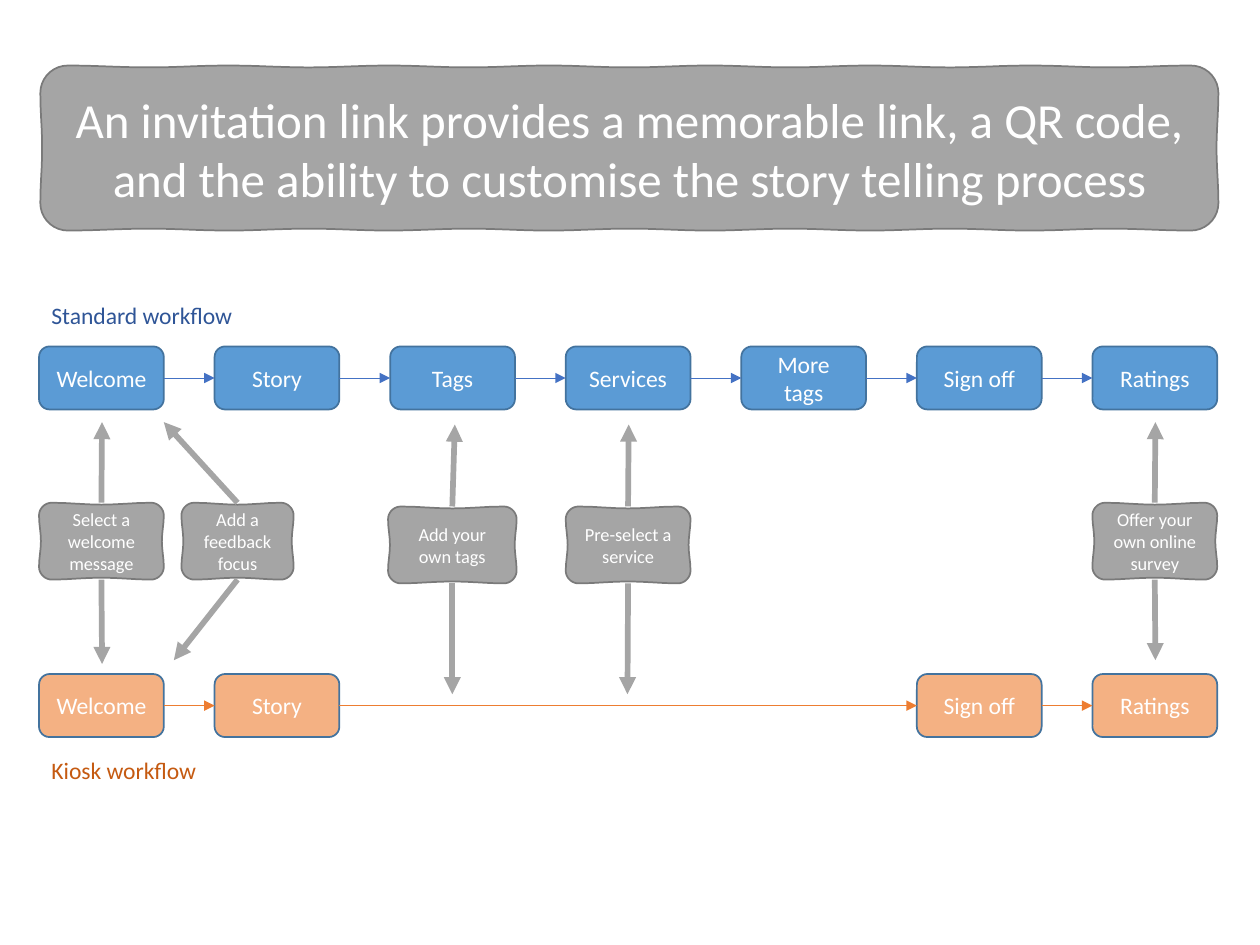
import math

from lxml import etree
from pptx import Presentation
from pptx.dml.color import RGBColor
from pptx.enum import shapes, text
from pptx.oxml import ns
from pptx.util import Inches, Pt

FONT = "Calibri"
WHITE, GREY, GREY_EDGE, BOX_EDGE = "FFFFFF", "A5A5A5", "7A7A7A", "43739E"
LEFT, PITCH = 0.31, 8.36 / 6
STEP_WIDTH, STEP_HEIGHT = 0.99, 0.5
TOP, LEFT_SIDE, BOTTOM, RIGHT_SIDE = range(4)
STEPS = ["Welcome", "Story", "Tags", "Services", "More tags", "Sign off", "Ratings"]
KIOSK_STEPS = ["Welcome", "Story", "Sign off", "Ratings"]

OPTIONS = [
    ("Select a welcome message", (0.31, 3.99, 0.99, 0.61), (0.81, 3.35), (0.81, 5.27)),
    ("Add a feedback focus", (1.44, 3.99, 0.89, 0.61), (1.3, 3.35), (1.38, 5.24)),
    ("Add your own tags", (3.08, 4.02, 1.02, 0.61), (3.61, 3.37), (3.59, 5.51)),
    ("Pre-select a service", (4.49, 4.02, 0.99, 0.61), (4.99, 3.37), (4.98, 5.51)),
    ("Offer your own online survey", (8.67, 3.99, 0.99, 0.61), (9.17, 3.35), (9.17, 5.24)),
]


def color(value):
    return RGBColor.from_string(value)


def apply(target, values):
    for name, value in values.items():
        setattr(target, name, value)


def write(shape, words, size, ink, align=text.PP_ALIGN.CENTER, **frame_values):
    frame = shape.text_frame
    apply(frame, {"word_wrap": True, **frame_values})
    para = frame.paragraphs[0]
    para.alignment = align
    span = para.add_run()
    span.text = words
    apply(span.font, {"name": FONT, "size": Pt(size)})
    span.font.color.rgb = color(ink)


def paint(shape, fill, edge):
    shape.shadow.inherit = False
    shape.fill.solid()
    shape.fill.fore_color.rgb = color(fill)
    shape.line.color.rgb = color(edge)
    shape.line.width = Pt(1)


def add_arrow(page, start, end, ink, width):
    arrow = page.shapes.add_connector(
        shapes.MSO_CONNECTOR.STRAIGHT, *map(Inches, (*start, *end)))
    arrow.line.color.rgb = color(ink)
    arrow.line.width = Pt(width)
    properties = arrow.element.spPr
    outline = properties.find(ns.qn("a:ln"))
    etree.SubElement(outline, ns.qn("a:tailEnd"), type="triangle")
    etree.SubElement(properties, ns.qn("a:effectLst"))
    return arrow


def sketch_points(left, top, width, height):
    radius = height / 6
    right, bottom = left + width, top + height
    corners = [
        (right - radius, top + radius, -90), (right - radius, bottom - radius, 0),
        (left + radius, bottom - radius, 90), (left + radius, top + radius, 180),
    ]
    arcs = [
        [(x + radius * math.cos(math.radians(first + turn)),
          y + radius * math.sin(math.radians(first + turn)))
         for turn in range(0, 91, 10)]
        for x, y, first in corners
    ]
    points = []
    for arc, following in zip(arcs, arcs[1:] + arcs[:1]):
        points += arc
        (x1, y1), (x2, y2) = arc[-1], following[0]
        length = math.hypot(x2 - x1, y2 - y1)
        count = max(8, round(length * 10))
        waves = max(1, round(length * 0.8))
        for index in range(1, count):
            share = index / count
            inset = 0.015 * math.sin(math.pi * waves * share) ** 2
            points.append((x1 + (x2 - x1) * share - (y2 - y1) / length * inset,
                           y1 + (y2 - y1) * share + (x2 - x1) / length * inset))
    return [(Inches(x), Inches(y)) for x, y in points]


def add_sketch_box(page, box, words, size):
    points = sketch_points(*box)
    builder = page.shapes.build_freeform(*points[0])
    builder.add_line_segments(points[1:], close=True)
    shape = builder.convert_to_shape()
    paint(shape, GREY, GREY_EDGE)
    write(shape, words, size, WHITE, vertical_anchor=text.MSO_ANCHOR.MIDDLE)


def add_step(page, box, words, fill):
    step = page.shapes.add_shape(
        shapes.MSO_SHAPE.ROUNDED_RECTANGLE, *map(Inches, box))
    paint(step, fill, BOX_EDGE)
    write(step, words, 13.5, WHITE, vertical_anchor=text.MSO_ANCHOR.MIDDLE)
    return step


def add_workflow(page, top, names, fill, arrow_ink):
    steps = [
        add_step(page, (LEFT + PITCH * STEPS.index(name), top, STEP_WIDTH, STEP_HEIGHT),
                 name, fill)
        for name in names
    ]
    for step, following in zip(steps, steps[1:]):
        arrow = add_arrow(page, (0, 0), (1, 1), arrow_ink, 0.5)
        arrow.begin_connect(step, RIGHT_SIDE)
        arrow.end_connect(following, LEFT_SIDE)


def add_heading(page, box, words, ink):
    heading = page.shapes.add_textbox(*map(Inches, box))
    write(heading, words, 13.5, ink, text.PP_ALIGN.LEFT,
          auto_size=text.MSO_AUTO_SIZE.SHAPE_TO_FIT_TEXT)


def add_option(page, words, box, upper_tip, lower_tip):
    left, top, width, height = box
    middle = left + width / 2
    add_sketch_box(page, box, words, 10.5)
    add_arrow(page, (middle, top), upper_tip, GREY, 3.25)
    add_arrow(page, (middle, top + height), lower_tip, GREY, 3.25)


def main():
    deck = Presentation()
    apply(deck, {"slide_width": Inches(10), "slide_height": Inches(7.5)})
    page = deck.slides.add_slide(deck.slide_layouts[6])
    add_sketch_box(
        page, (0.32, 0.52, 9.35, 1.31),
        "An invitation link provides a memorable link, a QR code, "
        "and the ability to customise the story telling process", 28)
    add_heading(page, (LEFT, 2.34, 2.71, 0.33), "Standard workflow", "2F5597")
    add_workflow(page, 2.75, STEPS, "5B9BD5", "4472C4")
    for option in OPTIONS:
        add_option(page, *option)
    add_workflow(page, 5.35, KIOSK_STEPS, "F4B183", "ED7D31")
    add_heading(page, (LEFT, 5.95, 2.71, 0.33), "Kiosk workflow", "C55A11")
    deck.save("out.pptx")


if __name__ == "__main__":
    main()
